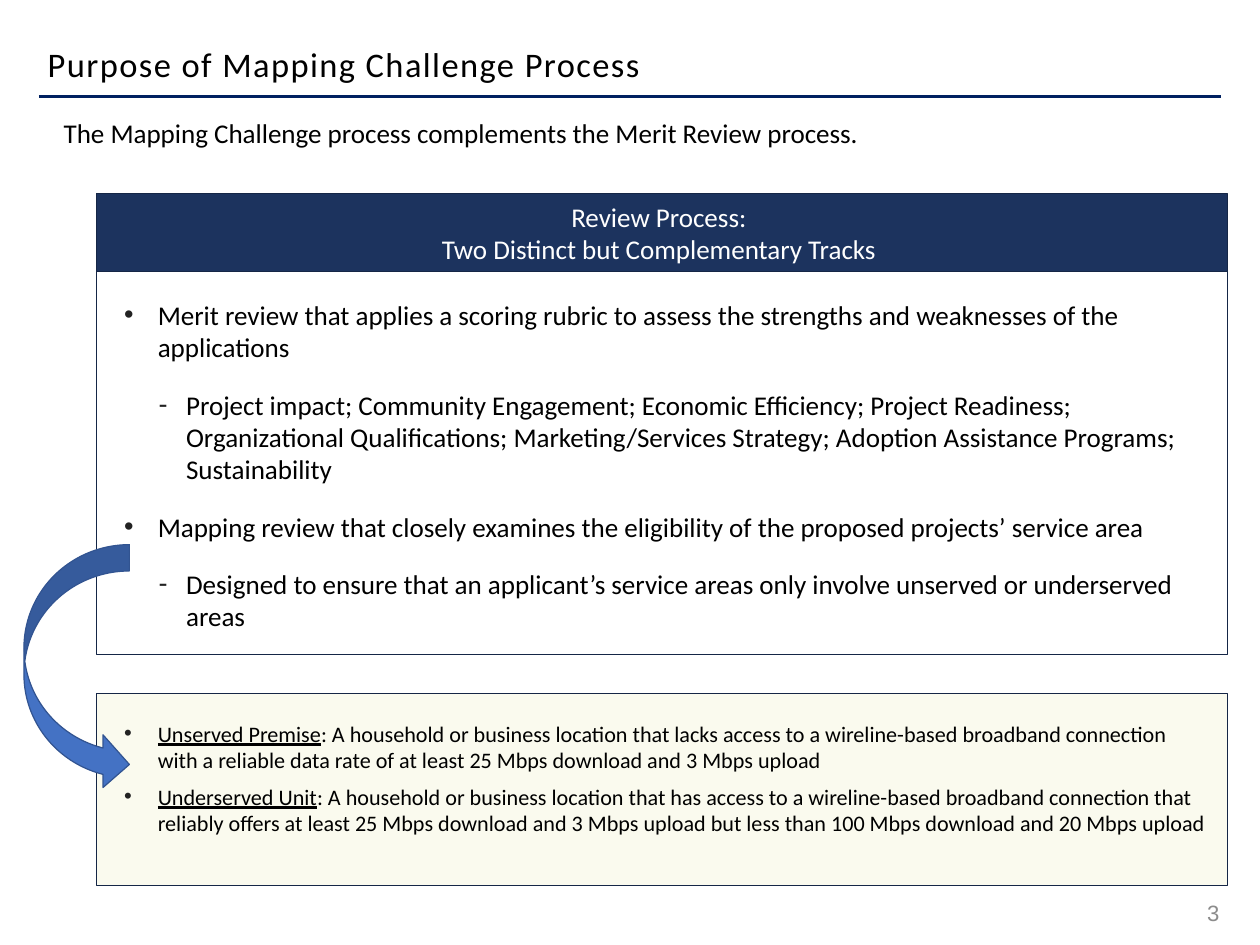
from dataclasses import dataclass
from typing import NamedTuple

from lxml.etree import SubElement
from pptx import Presentation
from pptx.dml.color import RGBColor
from pptx.enum.shapes import MSO_CONNECTOR, MSO_SHAPE
from pptx.enum.text import MSO_ANCHOR, PP_ALIGN
from pptx.oxml.ns import qn
from pptx.shapes.autoshape import Shape
from pptx.slide import Slide
from pptx.util import Emu, Inches, Pt

WIDTH, HEIGHT = Inches(14.22), Inches(10.67)


@dataclass(frozen=True)
class Theme:
    font: str = "Calibri"
    number_font: str = "Arial"
    title_size: int = 28
    body_size: int = 22
    small_size: int = 18
    text: str = "000000"
    white: str = "FFFFFF"
    number: str = "8C8C8C"
    bullet: str = "222222"
    rule: str = "002060"
    navy: str = "1C335E"
    border: str = "152646"
    cream: str = "FAFAEE"
    arrow: str = "4472C4"
    arrow_line: str = "325491"


THEME = Theme()


class Area(NamedTuple):
    """Left, top, width and height in percent of the slide."""
    left: float
    top: float
    width: float
    height: float

    def emu(self) -> tuple[Emu, Emu, Emu, Emu]:
        return (across(self.left), down(self.top),
                across(self.width), down(self.height))


@dataclass(frozen=True)
class Style:
    size: int = THEME.body_size
    color: str = THEME.text
    font: str = THEME.font
    align: PP_ALIGN = PP_ALIGN.LEFT
    gap: int = 0
    line_spacing: float | None = None
    tracking: int = 0


class Level(NamedTuple):
    margin: float
    indent: float
    mark: str


class Entry(NamedTuple):
    text: str
    level: Level | None = None
    term: str = ""


class Label(NamedTuple):
    area: Area
    entry: Entry
    style: Style
    anchor: MSO_ANCHOR = MSO_ANCHOR.TOP
    inset: float = 0.1


@dataclass(frozen=True)
class Panel:
    area: Area
    entries: tuple[Entry, ...]
    style: Style
    fill: str | None = None
    line_width: float = 0.75
    anchor: MSO_ANCHOR = MSO_ANCHOR.TOP
    insets: tuple[float, float, float, float] = (0.2, 0.3, 0.2, 0.2)


def across(percent: float) -> Emu:
    return Emu(round(WIDTH * percent / 100))


def down(percent: float) -> Emu:
    return Emu(round(HEIGHT * percent / 100))


POINT = Level(0.49, -0.38, "•")
DETAIL = Level(0.81, -0.31, "-")
LEAD = Level(0.49, 0, "")

LABELS = (
    Label(Area(3.09, 4.69, 96.91, 4.69), Entry("Purpose of Mapping Challenge Process"),
          Style(THEME.title_size, line_spacing=0.8, tracking=120), MSO_ANCHOR.BOTTOM),
    Label(Area(0.91, 11.9, 94.8, 4.4),
          Entry("The Mapping Challenge process complements the Merit Review process.", LEAD),
          Style(gap=4)),
    Label(Area(95.5, 94.94, 1.27, 3.28), Entry("3"),
          Style(THEME.small_size, THEME.number, THEME.number_font, PP_ALIGN.RIGHT),
          MSO_ANCHOR.MIDDLE, 0),
)

PANELS = (
    Panel(Area(7.67, 20.52, 89.73, 8.25),
          (Entry("Review Process: "), Entry("Two Distinct but Complementary Tracks ")),
          Style(color=THEME.white, align=PP_ALIGN.CENTER), THEME.navy, 1,
          MSO_ANCHOR.MIDDLE, (0.1, 0.05, 0.1, 0.05)),
    Panel(Area(7.67, 28.77, 89.73, 40.49), (
        Entry("Merit review that applies a scoring rubric to assess the strengths and "
              "weaknesses of the applications", POINT),
        Entry("Project impact; Community Engagement; Economic Efficiency; Project Readiness; "
              "Organizational Qualifications; Marketing/Services Strategy; Adoption "
              "Assistance Programs; Sustainability", DETAIL),
        Entry("Mapping review that closely examines the eligibility of the proposed "
              "projects’ service area", POINT),
        Entry("Designed to ensure that an applicant’s service areas only involve unserved "
              "or underserved areas", DETAIL),
    ), Style(gap=10)),
    Panel(Area(7.67, 73.38, 89.73, 20.34), (
        Entry(": A household or business location that lacks access to a wireline-based "
              "broadband connection with a reliable data rate of at least 25 Mbps download "
              "and 3 Mbps upload", POINT, "Unserved Premise"),
        Entry(": A household or business location that has access to a wireline-based "
              "broadband connection that reliably offers at least 25 Mbps download and "
              "3 Mbps upload but less than 100 Mbps download and 20 Mbps upload",
              POINT, "Underserved Unit"),
    ), Style(THEME.small_size, gap=4), THEME.cream),
)


def apply_level(paragraph, level: Level) -> None:
    properties = paragraph._p.get_or_add_pPr()
    properties.set("marL", str(Inches(level.margin)))
    properties.set("indent", str(Inches(level.indent)))
    if level.mark:
        color = SubElement(properties, qn("a:buClr"))
        SubElement(color, qn("a:srgbClr"), val=THEME.bullet)
        SubElement(properties, qn("a:buFont"), typeface=THEME.number_font)
        SubElement(properties, qn("a:buChar"), char=level.mark)


def write(shape: Shape, entries: tuple[Entry, ...], style: Style, anchor: MSO_ANCHOR,
          insets: tuple[float, float, float, float]) -> None:
    frame = shape.text_frame
    frame.word_wrap = True
    frame.vertical_anchor = anchor
    (frame.margin_left, frame.margin_top,
     frame.margin_right, frame.margin_bottom) = map(Inches, insets)
    for index, entry in enumerate(entries):
        paragraph = frame.add_paragraph() if index else frame.paragraphs[0]
        paragraph.alignment = style.align
        paragraph.space_before = paragraph.space_after = Pt(style.gap)
        if style.line_spacing:
            paragraph.line_spacing = style.line_spacing
        if entry.level:
            apply_level(paragraph, entry.level)
        paragraph.font.name = style.font
        paragraph.font.size = Pt(style.size)
        paragraph.font.color.rgb = RGBColor.from_string(style.color)
        if entry.term:
            term = paragraph.add_run()
            term.text = entry.term
            term.font.underline = True
        wording = paragraph.add_run()
        wording.text = entry.text
        if style.tracking:
            wording.font._element.set("spc", str(style.tracking))


def add_figure(slide: Slide, kind: MSO_SHAPE, area: Area, fill: str | None,
               line: str, line_width: float) -> Shape:
    figure = slide.shapes.add_shape(kind, *area.emu())
    figure.shadow.inherit = False
    if fill:
        figure.fill.solid()
        figure.fill.fore_color.rgb = RGBColor.from_string(fill)
    else:
        figure.fill.background()
    figure.line.color.rgb = RGBColor.from_string(line)
    figure.line.width = Pt(line_width)
    return figure


def add_title_rule(slide: Slide) -> None:
    rule = slide.shapes.add_connector(MSO_CONNECTOR.STRAIGHT, across(3.09), down(10.22),
                                      across(96.91), down(10.22))
    rule.line.color.rgb = RGBColor.from_string(THEME.rule)
    rule.line.width = Pt(2)
    SubElement(rule._element.spPr, qn("a:effectLst"))


def main() -> None:
    deck = Presentation()
    deck.slide_width, deck.slide_height = WIDTH, HEIGHT
    slide = deck.slides.add_slide(deck.slide_layouts[6])
    add_title_rule(slide)
    for label in LABELS:
        box = slide.shapes.add_textbox(*label.area.emu())
        write(box, (label.entry,), label.style, label.anchor,
              (label.inset, label.inset / 2, label.inset, label.inset / 2))
    for panel in PANELS:
        figure = add_figure(slide, MSO_SHAPE.RECTANGLE, panel.area, panel.fill,
                            THEME.border, panel.line_width)
        write(figure, panel.entries, panel.style, panel.anchor, panel.insets)
    add_figure(slide, MSO_SHAPE.CURVED_RIGHT_ARROW, Area(1.9, 57.64, 8.37, 26.05),
               THEME.arrow, THEME.arrow_line, 1)
    deck.save("out.pptx")


if __name__ == "__main__":
    main()
